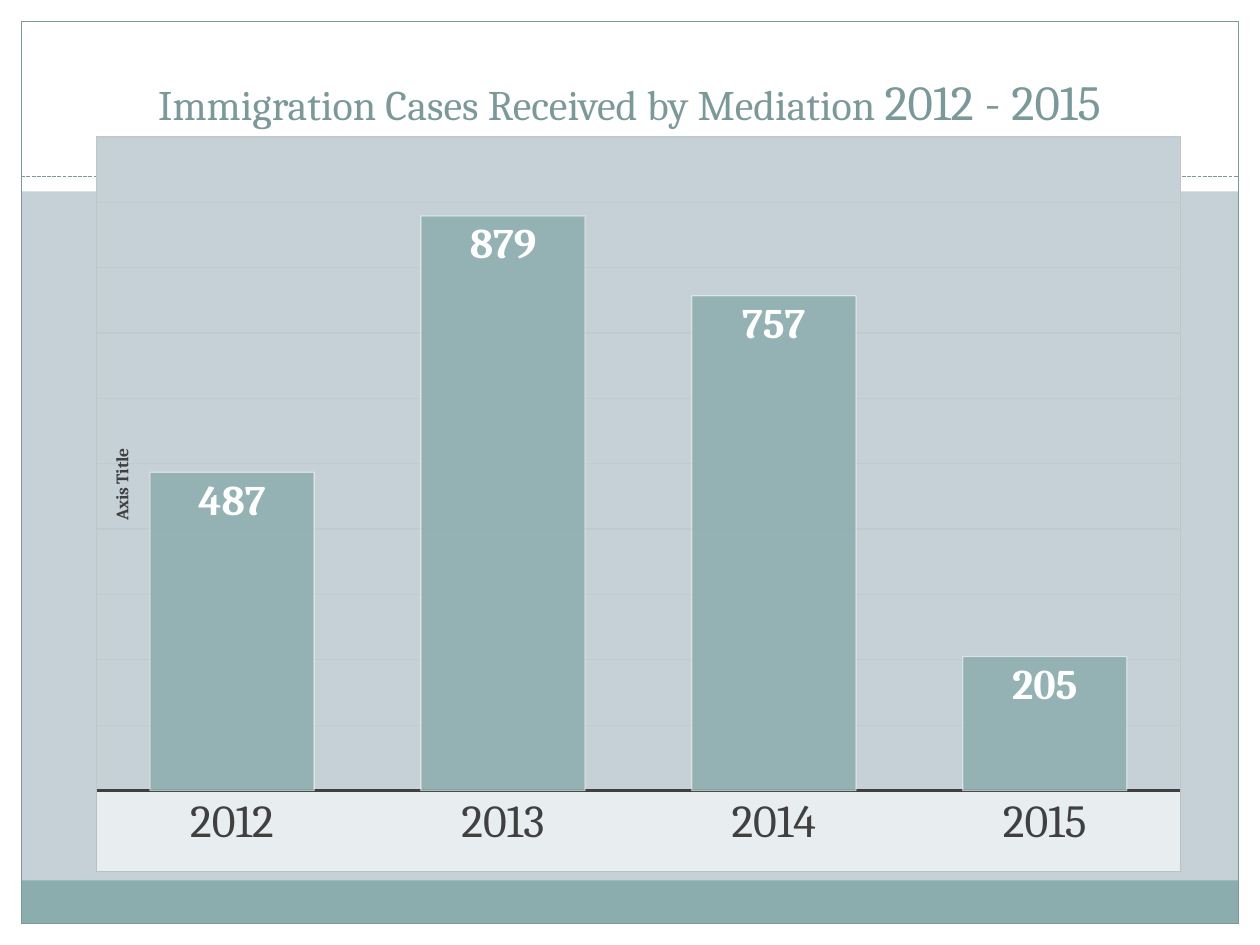
from lxml import etree
from pptx import Presentation
from pptx.chart.data import CategoryChartData
from pptx.dml.color import RGBColor
from pptx.enum import chart as ch, dml, shapes, text
from pptx.oxml import parse_xml
from pptx.oxml.ns import nsdecls, qn
from pptx.util import Cm, Pt

FONT = "Cambria"
TEAL, SLATE, GREY, WHITE = "7C999A", "C5D1D7", "404040", "FFFFFF"
TITLE = [("Immigration Cases Received by Mediation ", 24), ("2012 - 2015", 28)]
CASES = {"2012": 487, "2013": 879, "2014": 757, "2015": 205}
W, H, EDGE = 25.4, 19.05, 0.43
BANDS = [
    (0, H - EDGE, W, EDGE, WHITE),
    (0, 0, W, 3.86, WHITE),
    (0, 0, EDGE, H, WHITE),
    (W - EDGE, 0, EDGE, H, WHITE),
    (EDGE, 17.75, W - 2 * EDGE, 0.87, "8CADAE"),
]


def rgb(value):
    return RGBColor.from_string(value)


def paint(fill, color):
    fill.solid()
    fill.fore_color.rgb = rgb(color)


def stroke(line, color, width=0.75):
    paint(line.fill, color)
    line.width = Pt(width)


def style(font, size, color, bold=False):
    font.name, font.size, font.bold = FONT, Pt(size), bold
    font.color.rgb = rgb(color)


def set_alpha(fmt_element, percent):
    color = next(fmt_element.iter(qn("a:srgbClr")))
    etree.SubElement(color, qn("a:alpha")).set("val", str(percent * 1000))


def layout(x, y, w=None, h=None, inner=False):
    parts = [("xMode", "edge"), ("yMode", "edge"), ("x", x), ("y", y)]
    if inner:
        parts = [("layoutTarget", "inner")] + parts + [("w", w), ("h", h)]
    body = "".join(f'<c:{tag} val="{val}"/>' for tag, val in parts)
    return parse_xml(f'<c:layout {nsdecls("c")}><c:manualLayout>{body}'
                     '</c:manualLayout></c:layout>')


def replace_layout(parent, new, index):
    for old in parent.findall(qn("c:layout")):
        parent.remove(old)
    parent.insert(index, new)


def area(fill, border=None):
    line = (f'<a:ln w="9525"><a:solidFill><a:srgbClr val="{border}"/></a:solidFill></a:ln>'
            if border else '<a:ln><a:noFill/></a:ln>')
    return parse_xml(f'<c:spPr {nsdecls("c", "a")}><a:solidFill><a:srgbClr val="{fill}"/>'
                     f'</a:solidFill>{line}</c:spPr>')


def add_frame(s):
    for x, y, w, h, color in BANDS:
        sp = s.shapes.add_shape(shapes.MSO_SHAPE.RECTANGLE, Cm(x), Cm(y), Cm(w), Cm(h))
        sp.shadow.inherit = False
        paint(sp.fill, color)
        sp.line.fill.background()
    sp = s.shapes.add_shape(shapes.MSO_SHAPE.RECTANGLE, Cm(EDGE), Cm(EDGE),
                            Cm(W - 2 * EDGE), Cm(H - 2 * EDGE))
    sp.shadow.inherit = False
    sp.fill.background()
    stroke(sp.line, TEAL)
    rule = s.shapes.add_connector(shapes.MSO_CONNECTOR.STRAIGHT,
                                  Cm(EDGE), Cm(3.56), Cm(W - EDGE), Cm(3.56))
    stroke(rule.line, TEAL)
    rule.line.dash_style = dml.MSO_LINE.SQUARE_DOT
    next(rule.line._ln.iter(qn("a:prstDash"))).set("val", "sysDash")
    etree.SubElement(rule._element.spPr, qn("a:effectLst"))


def add_title(s):
    tf = s.shapes.add_textbox(Cm(0.84), Cm(0.64), Cm(23.7), Cm(2.11)).text_frame
    tf.word_wrap = True
    tf.vertical_anchor = text.MSO_ANCHOR.BOTTOM
    p = tf.paragraphs[0]
    p.alignment = text.PP_ALIGN.CENTER
    p.font.name = FONT
    p.font.color.rgb = rgb(TEAL)
    for words, size in TITLE:
        r = p.add_run()
        r.text = words
        style(r.font, size, TEAL)


def add_cases_chart(s):
    data = CategoryChartData()
    data.categories = list(CASES)
    data.add_series("Series 1", list(CASES.values()))
    chart = s.shapes.add_chart(ch.XL_CHART_TYPE.COLUMN_CLUSTERED, Cm(1.92), Cm(2.75),
                               Cm(21.9), Cm(14.83), data).chart
    chart.has_title = chart.has_legend = False
    style(chart.font, 10, "000000")

    cat = chart.category_axis
    cat.major_tick_mark = ch.XL_TICK_MARK.NONE
    style(cat.tick_labels.font, 26.3, GREY)
    stroke(cat.format.line, GREY, 1.5)

    val = chart.value_axis
    val.minimum_scale, val.maximum_scale, val.major_unit = 0, 1000, 100
    val.tick_labels.number_format = "#,##0"
    val.tick_labels.number_format_is_linked = False
    stroke(val.major_gridlines.format.line, "C0CBD0")
    p = val.axis_title.text_frame.paragraphs[0]
    r = p.add_run()
    r.text = "Axis Title"
    style(r.font, 10, GREY, True)
    body = next(val.axis_title._element.iter(qn("a:bodyPr")))
    body.set("rot", "-5400000")
    body.set("vert", "horz")
    replace_layout(val.axis_title._element, layout(0.01, 0.42), 1)
    val.visible = False

    plot = chart.plots[0]
    plot.gap_width = 65
    plot.vary_by_categories = False
    bars = plot.series[0]
    paint(bars.format.fill, "8CADAE")
    set_alpha(bars._element.spPr, 85)
    stroke(bars.format.line, WHITE)
    set_alpha(bars.format.line._ln, 50)
    labels = bars.data_labels
    labels.show_value = True
    labels.position = ch.XL_LABEL_POSITION.INSIDE_END
    style(labels.font, 24.1, WHITE, True)

    plot_area = chart._chartSpace.chart.plotArea
    replace_layout(plot_area, layout(0, 0, 1, 0.89, True), 0)
    plot_area.append(area(SLATE))
    chart._chartSpace.chart.addnext(area("E8EDEF", "BFBFBF"))


def main():
    prs = Presentation()
    prs.slide_width, prs.slide_height = Cm(W), Cm(H)
    s = prs.slides.add_slide(prs.slide_layouts[6])
    paint(s.background.fill, SLATE)
    add_frame(s)
    add_title(s)
    add_cases_chart(s)
    prs.save("out.pptx")


if __name__ == "__main__":
    main()
